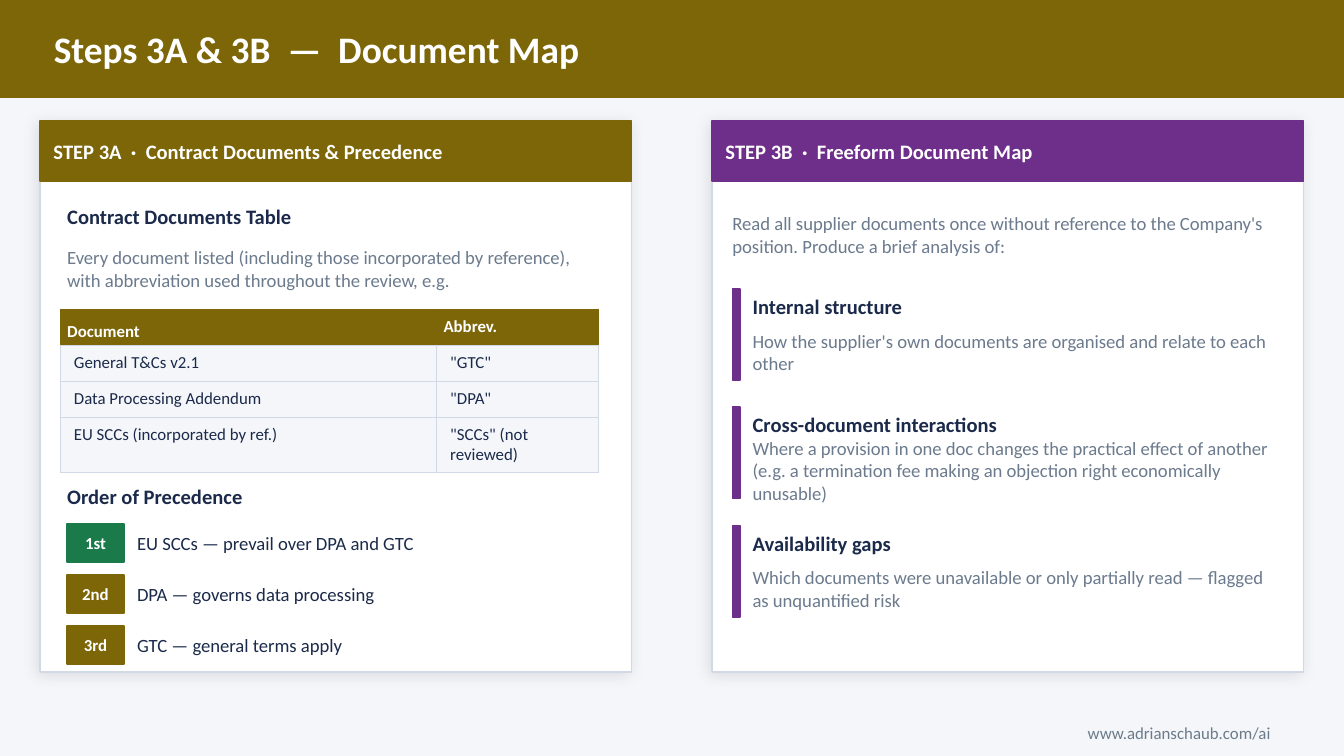
from dataclasses import dataclass

from lxml.etree import SubElement
from pptx import Presentation
from pptx.dml.color import RGBColor
from pptx.enum.shapes import MSO_SHAPE
from pptx.enum.text import MSO_ANCHOR, MSO_AUTO_SIZE, PP_ALIGN
from pptx.oxml import parse_xml
from pptx.oxml.ns import nsdecls, qn
from pptx.util import Inches, Pt


@dataclass(frozen=True)
class Theme:
    font: str = "Calibri"
    background: str = "F4F6F9"
    white: str = "FFFFFF"
    gold: str = "7D6608"
    purple: str = "6E2F8A"
    green: str = "1A7A4A"
    navy: str = "1B2A4A"
    grey: str = "6B7A8D"
    footer: str = "6B7B8A"
    border: str = "D1D9E6"
    title_size: int = 20
    heading_size: int = 11
    body_size: int = 10
    small_size: int = 9


@dataclass(frozen=True)
class Box:
    left: float
    top: float
    width: float
    height: float

    def inner(self, left, top, width, height):
        """A box whose position is measured from this box's corner."""
        return Box(self.left + left, self.top + top, width, height)

    def lengths(self):
        return [Inches(n) for n in (self.left, self.top, self.width, self.height)]


THEME = Theme()
CONTRACT_DOCUMENTS = [
    ("Document", "Abbrev."),
    ("General T&Cs v2.1", '"GTC"'),
    ("Data Processing Addendum", '"DPA"'),
    ("EU SCCs (incorporated by ref.)", '"SCCs" (not reviewed)'),
]
PRECEDENCE = [
    ("1st", "EU SCCs — prevail over DPA and GTC", THEME.green),
    ("2nd", "DPA — governs data processing", THEME.gold),
    ("3rd", "GTC — general terms apply", THEME.gold),
]
ANALYSIS = [
    ("Internal structure",
     "How the supplier's own documents are organised and relate to each other"),
    ("Cross-document interactions",
     "Where a provision in one doc changes the practical effect of another "
     "(e.g. a termination fee making an objection right economically unusable)"),
    ("Availability gaps",
     "Which documents were unavailable or only partially read — flagged as "
     "unquantified risk"),
]


def color(code):
    return RGBColor.from_string(code)


def format_para(para, size, code, bold=False, align=PP_ALIGN.LEFT):
    para.alignment = align
    for span in para.runs:
        span.font.name = THEME.font
        span.font.size = Pt(size)
        span.font.bold = bold
        span.font.color.rgb = color(code)


def write(shape, text, size, code, bold=False, align=PP_ALIGN.LEFT, inset=(0, 0)):
    """Fill a shape with one middle-anchored paragraph; inset is left and right."""
    frame = shape.text_frame
    frame.text = text
    frame.word_wrap = True
    frame.auto_size = MSO_AUTO_SIZE.NONE
    frame.vertical_anchor = MSO_ANCHOR.MIDDLE
    frame.margin_left, frame.margin_right = (Inches(n) for n in inset)
    frame.margin_top = frame.margin_bottom = 0
    format_para(frame.paragraphs[0], size, code, bold, align)


def paint(shape, fill, line):
    shape.fill.solid()
    shape.fill.fore_color.rgb = color(fill)
    shape.line.color.rgb = color(line)
    shape.line.width = Pt(1)


def add_rectangle(page, box, fill, line=None):
    shape = page.shapes.add_shape(MSO_SHAPE.RECTANGLE, *box.lengths())
    shape.shadow.inherit = False
    paint(shape, fill, line or fill)
    return shape


def add_text(page, box, text, size, code, **options):
    write(page.shapes.add_textbox(*box.lengths()), text, size, code, **options)


def add_heading(page, box, text):
    add_text(page, box, text, THEME.heading_size, THEME.navy, bold=True)


def add_soft_shadow(shape):
    effects = shape._element.spPr.find(qn("a:effectLst"))
    effects.append(parse_xml(
        f'<a:outerShdw {nsdecls("a")} blurRad="{Pt(8)}" dist="{Pt(2)}" '
        f'dir="{135 * 60000}" algn="bl" rotWithShape="0">'
        '<a:srgbClr val="000000"><a:alpha val="10000"/></a:srgbClr></a:outerShdw>'))


def add_cell_borders(cell, code):
    properties = cell._tc.get_or_add_tcPr()
    for side in ("lnL", "lnR", "lnT", "lnB"):
        line = SubElement(properties, qn(f"a:{side}"), w=str(Pt(0.5)))
        fill = SubElement(line, qn("a:solidFill"))
        SubElement(fill, qn("a:srgbClr"), val=code)


def add_title_band(page, box):
    title = page.shapes.title
    title.left, title.top, title.width, title.height = box.lengths()
    paint(title, THEME.gold, THEME.gold)
    write(title, "Steps 3A & 3B  —  Document Map", THEME.title_size, THEME.white,
          bold=True, inset=(0.4, 0.4))


def add_panel(page, box, heading, accent):
    add_soft_shadow(add_rectangle(page, box, THEME.white, THEME.border))
    header = add_rectangle(page, box.inner(0, 0, box.width, 0.45), accent)
    write(header, heading, THEME.heading_size, THEME.white, bold=True, inset=(0.1, 0.1))


def add_document_table(page, box):
    table = page.shapes.add_table(len(CONTRACT_DOCUMENTS), 2, *box.lengths()).table
    table.horz_banding = False
    for column, width in zip(table.columns, (2.8, 1.2)):
        column.width = Inches(width)
    for row_number, values in enumerate(CONTRACT_DOCUMENTS):
        header = row_number == 0
        for column_number, value in enumerate(values):
            cell = table.cell(row_number, column_number)
            cell.text = value
            cell.margin_left = cell.margin_right = Inches(0.05 if header else 0.1)
            cell.margin_top = cell.margin_bottom = Inches(0 if header else 0.05)
            cell.vertical_anchor = MSO_ANCHOR.MIDDLE if header else MSO_ANCHOR.TOP
            format_para(cell.text_frame.paragraphs[0], THEME.small_size,
                        THEME.white if header else THEME.navy, bold=header)
            add_cell_borders(cell, THEME.gold if header else THEME.border)
            cell.fill.solid()
            cell.fill.fore_color.rgb = color(THEME.gold if header else THEME.background)
    table.cell(0, 0).margin_top = Inches(0.07)


def add_precedence(page, box):
    for index, (rank, rule, fill) in enumerate(PRECEDENCE):
        top = index * 0.38
        badge = add_rectangle(page, box.inner(0, top, 0.42, 0.28), fill)
        write(badge, rank, THEME.small_size, THEME.white, bold=True,
              align=PP_ALIGN.CENTER)
        add_text(page, box.inner(0.52, top, 3.2, 0.28), rule,
                 THEME.body_size, THEME.navy)


def add_contract_panel(page, box):
    add_panel(page, box, "STEP 3A  ·  Contract Documents & Precedence", THEME.gold)
    add_heading(page, box.inner(0.2, 0.57, 3.9, 0.28), "Contract Documents Table")
    add_text(page, box.inner(0.2, 0.85, 4, 0.5),
             "Every document listed (including those incorporated by reference), "
             "with abbreviation used throughout the review, e.g.",
             THEME.body_size, THEME.grey)
    add_document_table(page, box.inner(0.15, 1.4, 4, 1.08))
    add_heading(page, box.inner(0.2, 2.65, 3.9, 0.28), "Order of Precedence")
    add_precedence(page, box.inner(0.2, 3, 3.72, 1.04))


def add_map_panel(page, box):
    add_panel(page, box, "STEP 3B  ·  Freeform Document Map", THEME.purple)
    add_text(page, box.inner(0.15, 0.57, 4.1, 0.55),
             "Read all supplier documents once without reference to the Company's "
             "position. Produce a brief analysis of:", THEME.body_size, THEME.grey)
    for index, (heading, detail) in enumerate(ANALYSIS):
        item = box.inner(0.15, 1.25 + index * 0.88, 4.05, 0.68)
        add_rectangle(page, item.inner(0, 0, 0.06, item.height), THEME.purple)
        add_heading(page, item.inner(0.15, 0, 3.9, 0.26), heading)
        add_text(page, item.inner(0.15, 0.26, 3.9, 0.42), detail,
                 THEME.body_size, THEME.grey)


def main():
    deck = Presentation()
    deck.slide_width = Inches(10)
    deck.slide_height = deck.slide_width * 9 // 16
    page = deck.slides.add_slide(deck.slide_layouts[5])
    page.background.fill.solid()
    page.background.fill.fore_color.rgb = color(THEME.background)
    add_title_band(page, Box(0, 0, 10, 0.72))
    add_contract_panel(page, Box(0.3, 0.9, 4.4, 4.1))
    add_map_panel(page, Box(5.3, 0.9, 4.4, 4.1))
    add_text(page, Box(0.45, 5.34, 9.1, 0.22), "www.adrianschaub.com/ai",
             THEME.small_size, THEME.footer, align=PP_ALIGN.RIGHT, inset=(0.1, 0.1))
    deck.save("out.pptx")


if __name__ == "__main__":
    main()
